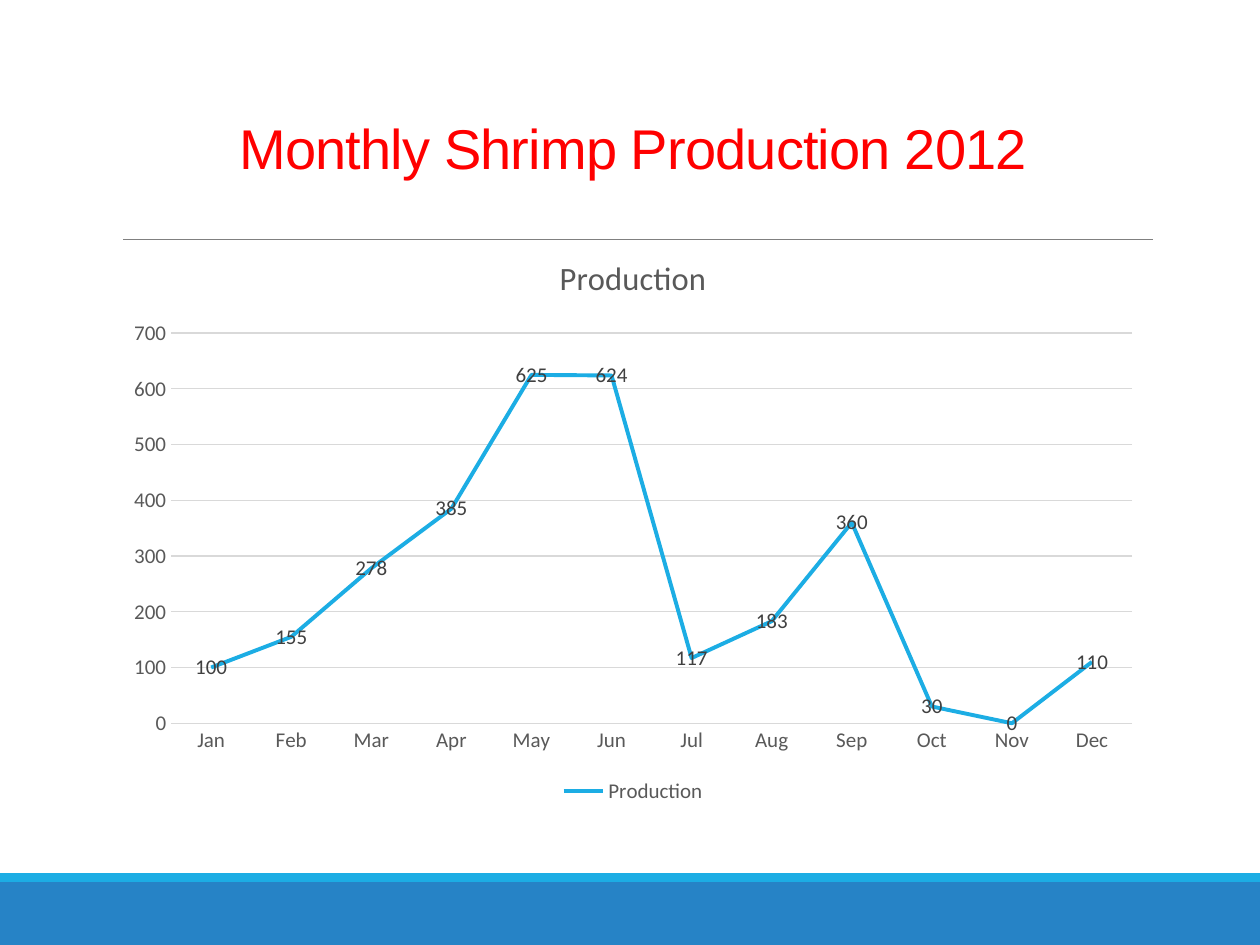
from dataclasses import dataclass

from lxml import etree
from pptx import Presentation
from pptx import util as u
from pptx.chart.data import CategoryChartData
from pptx.dml.color import RGBColor
from pptx.enum import chart as ch, shapes, text
from pptx.oxml.ns import qn

W, H = u.Inches(10), u.Inches(7.5)
BLUE = RGBColor(0x26, 0x83, 0xC6)
CYAN = RGBColor(0x1C, 0xAD, 0xE4)
RED = RGBColor(0xFF, 0x00, 0x00)
RULE = RGBColor(0x80, 0x80, 0x80)
GRID = RGBColor(0xD9, 0xD9, 0xD9)
GREY = RGBColor(0x59, 0x59, 0x59)
DARK = RGBColor(0x40, 0x40, 0x40)

# Content column, as shares of the slide width
LEFT, WIDTH = 0.09, 0.825

MONTHS = "Jan Feb Mar Apr May Jun Jul Aug Sep Oct Nov Dec".split()
PRODUCTION = (100, 155, 278, 385, 625, 624, 117, 183, 360, 30, 0, 110)


@dataclass(frozen=True)
class Band:
    """Full-width footer band; top and height are shares of the slide height."""
    top: float
    height: float
    color: RGBColor


BANDS = (Band(14 / 15, 1 / 15, BLUE), Band(6.93 / 7.5, 0.07 / 7.5, CYAN))


def add_band(s, band: Band) -> None:
    sp = s.shapes.add_shape(shapes.MSO_SHAPE.RECTANGLE, 0, int(H * band.top),
                            W, int(H * band.height))
    sp.shadow.inherit = False
    sp.fill.solid()
    sp.fill.fore_color.rgb = band.color
    sp.line.fill.background()


def add_rule(s, x1: float, x2: float, y: float) -> None:
    ln = s.shapes.add_connector(shapes.MSO_CONNECTOR.STRAIGHT, int(W * x1),
                                int(H * y), int(W * x2), int(H * y))
    ln.line.color.rgb = RULE
    ln.line.width = u.Pt(0.5)
    etree.SubElement(ln._element.spPr, qn("a:effectLst"))


def style_font(font, size: float, color: RGBColor, name: str = "Calibri") -> None:
    font.size, font.name, font.bold = u.Pt(size), name, False
    font.color.rgb = color


def write(tf, words: str, *, size: float, color: RGBColor, name: str = "Calibri",
          align=text.PP_ALIGN.CENTER, line_spacing=None, tracking: float = 0) -> None:
    p = tf.paragraphs[0]
    p.alignment = align
    p.line_spacing = line_spacing
    r = p.add_run()
    r.text = words
    style_font(r.font, size, color, name)
    if tracking:
        r.font._element.set("spc", str(int(tracking * 100)))


def add_title(s, words: str) -> None:
    sp = s.shapes.add_textbox(int(W * LEFT), u.Inches(0.31), int(W * WIDTH), u.Inches(1.71))
    tf = sp.text_frame
    tf.word_wrap = True
    tf.vertical_anchor = text.MSO_ANCHOR.BOTTOM
    tf.margin_bottom = u.Inches(0.58)
    write(tf, words, size=32, color=RED, name="Arial", line_spacing=0.85, tracking=-0.5)


def style_axis(axis) -> None:
    axis.major_tick_mark = axis.minor_tick_mark = ch.XL_TICK_MARK.NONE
    style_font(axis.tick_labels.font, 12, GREY)


def add_line_chart(s, name: str) -> None:
    data = CategoryChartData()
    data.categories = MONTHS
    data.add_series(name, PRODUCTION)
    c = s.shapes.add_chart(ch.XL_CHART_TYPE.LINE, int(W * LEFT), u.Inches(1.83),
                           int(W * WIDTH), u.Inches(4.59), data).chart
    style_font(c.font, 10, RGBColor(0, 0, 0))
    c.has_title = True
    write(c.chart_title.text_frame, name, size=18.6, color=GREY)
    c.chart_title.include_in_layout = False

    c.has_legend = True
    c.legend.position = ch.XL_LEGEND_POSITION.BOTTOM
    c.legend.include_in_layout = False
    style_font(c.legend.font, 12, GREY)

    # Axes and gridlines
    cat, val = c.category_axis, c.value_axis
    for axis in (cat, val):
        style_axis(axis)
    val.has_major_gridlines = True
    for line in (cat.format.line, val.major_gridlines.format.line):
        line.color.rgb = GRID
        line.width = u.Pt(0.75)
    val.format.line.fill.background()

    # Series and its value labels
    plot = c.plots[0]
    plot.vary_by_categories = False
    series = plot.series[0]
    series.smooth = False
    series.marker.style = ch.XL_MARKER_STYLE.NONE
    series.format.line.color.rgb = CYAN
    series.format.line.width = u.Pt(2.25)
    labels = series.data_labels
    labels.show_value = True
    labels.position = ch.XL_LABEL_POSITION.CENTER
    style_font(labels.font, 12, DARK)


def main() -> None:
    prs = Presentation()
    prs.slide_width, prs.slide_height = W, H
    s = prs.slides.add_slide(prs.slide_layouts[6])
    for band in BANDS:
        add_band(s, band)
    add_rule(s, 0.098, 0.915, 1.9 / 7.5)
    add_title(s, "Monthly Shrimp Production 2012")
    add_line_chart(s, "Production")
    prs.save("out.pptx")


if __name__ == "__main__":
    main()
